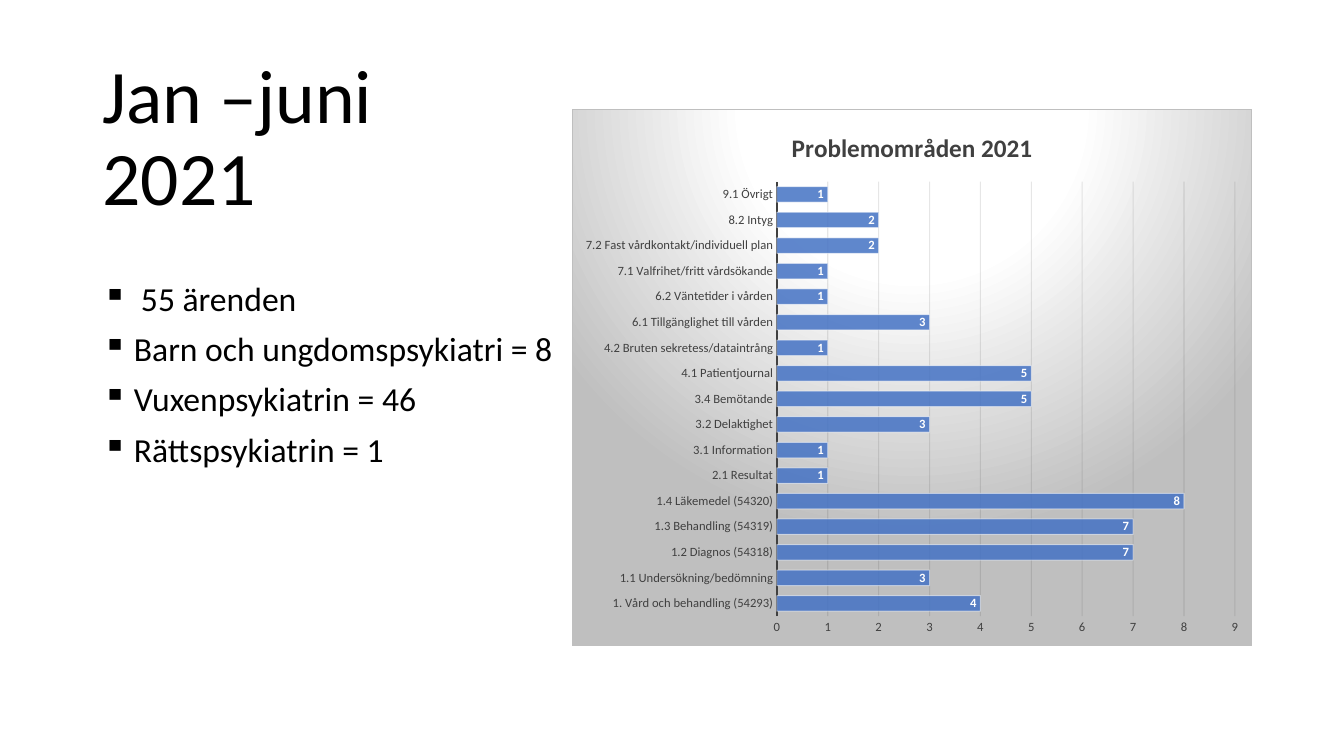
from dataclasses import dataclass

from lxml.etree import SubElement
from pptx import Presentation
from pptx.chart.chart import Chart
from pptx.chart.data import CategoryChartData
from pptx.dml.color import RGBColor
from pptx.enum.chart import XL_CHART_TYPE as ChartType
from pptx.enum.chart import XL_LABEL_POSITION as LabelPosition
from pptx.enum.chart import XL_TICK_MARK as TickMark
from pptx.enum.text import MSO_ANCHOR as Anchor
from pptx.oxml import parse_xml
from pptx.oxml.ns import nsdecls, qn
from pptx.slide import Slide
from pptx.text.text import Font, TextFrame
from pptx.util import Inches, Pt

FONT = "Calibri"
COLORS = {
    "text": "000000",
    "axis": "404040",
    "grid": "0D0D0D",
    "bar": "4472C4",
    "white": "FFFFFF",
    "gray": "BFBFBF",
}


@dataclass
class Bullet:
    text: str
    indent: float = 0.31


@dataclass
class Area:
    left: float
    top: float
    width: float
    height: float

    def lengths(self) -> list[Inches]:
        return [Inches(v) for v in (self.left, self.top, self.width, self.height)]


TITLE_AREA = Area(0.92, 0.5, 4.3, 1.75)
BODY_AREA = Area(0.92, 2.25, 4.75, 4.17)
CHART_AREA = Area(5.67, 1.08, 6.75, 5.33)

BULLETS = [
    Bullet("55 ärenden", 0.38),
    Bullet("Barn och ungdomspsykiatri = 8"),
    Bullet("Vuxenpsykiatrin = 46"),
    Bullet("Rättspsykiatrin = 1"),
]

PROBLEM_COUNTS = {
    "1. Vård och behandling (54293)": 4,
    "1.1 Undersökning/bedömning": 3,
    "1.2 Diagnos (54318)": 7,
    "1.3 Behandling (54319)": 7,
    "1.4 Läkemedel (54320)": 8,
    "2.1 Resultat": 1,
    "3.1 Information": 1,
    "3.2 Delaktighet": 3,
    "3.4 Bemötande": 5,
    "4.1 Patientjournal": 5,
    "4.2 Bruten sekretess/dataintrång": 1,
    "6.1 Tillgänglighet till vården": 3,
    "6.2 Väntetider i vården": 1,
    "7.1 Valfrihet/fritt vårdsökande": 1,
    "7.2 Fast vårdkontakt/individuell plan": 2,
    "8.2 Intyg": 2,
    "9.1 Övrigt": 1,
}


def color(name: str) -> RGBColor:
    return RGBColor.from_string(COLORS[name])


def style_font(font: Font, size: float, color_name: str, bold: bool = False) -> None:
    font.name = FONT
    font.size = Pt(size)
    font.bold = bold
    font.color.rgb = color(color_name)


def add_text_frame(slide: Slide, area: Area) -> TextFrame:
    frame = slide.shapes.add_textbox(*area.lengths()).text_frame
    frame.word_wrap = True
    return frame


def add_title(slide: Slide) -> None:
    frame = add_text_frame(slide, TITLE_AREA)
    frame.vertical_anchor = Anchor.BOTTOM
    para = frame.paragraphs[0]
    para.text = "Jan –juni 2021"
    para.line_spacing = 0.9
    style_font(para.font, 54, "text")


def add_bullets(slide: Slide) -> None:
    frame = add_text_frame(slide, BODY_AREA)
    frame.margin_top = Inches(0.55)
    for index, bullet in enumerate(BULLETS):
        para = frame.add_paragraph() if index else frame.paragraphs[0]
        para.text = bullet.text
        para.line_spacing = 0.9
        para.space_before = Pt(10)
        style_font(para.font, 24, "text")
        properties = para._p.get_or_add_pPr()
        properties.set("marL", str(Inches(bullet.indent)))
        properties.set("indent", str(-Inches(bullet.indent)))
        marker = parse_xml(f'<a:buChar {nsdecls("a")} char="▪"/>')
        properties.find(qn("a:defRPr")).addprevious(marker)


def set_opacity(chart: Chart, parent: str, percent: int) -> None:
    for fill_color in chart.element.xpath(f".//{parent}//a:srgbClr"):
        SubElement(fill_color, qn("a:alpha"), val=str(percent * 1000))


def fill_chart_area(chart: Chart) -> None:
    stops = "".join(
        f'<a:gs pos="{position * 1000}"><a:srgbClr val="{COLORS[name]}"/></a:gs>'
        for position, name in ((0, "white"), (39, "white"), (100, "gray"))
    )
    area_style = parse_xml(
        f'<c:spPr {nsdecls("c", "a")}><a:gradFill><a:gsLst>{stops}</a:gsLst>'
        '<a:path path="circle">'
        '<a:fillToRect l="50000" t="-80000" r="50000" b="180000"/></a:path>'
        f'</a:gradFill><a:ln w="{Pt(0.75)}"><a:solidFill>'
        f'<a:srgbClr val="{COLORS["gray"]}"/></a:solidFill></a:ln></c:spPr>'
    )
    chart.element.find(qn("c:chart")).addnext(area_style)


def style_axes(chart: Chart) -> None:
    for axis in (chart.category_axis, chart.value_axis):
        axis.major_tick_mark = TickMark.NONE
        axis.minor_tick_mark = TickMark.NONE
        style_font(axis.tick_labels.font, 9, "axis")
    category_line = chart.category_axis.format.line
    category_line.color.rgb = color("axis")
    category_line.width = Pt(1.5)

    values = chart.value_axis
    values.minimum_scale, values.maximum_scale, values.major_unit = 0, 9, 1
    values.format.line.fill.background()
    values.has_major_gridlines = True
    grid_line = values.major_gridlines.format.line
    grid_line.color.rgb = color("grid")
    grid_line.width = Pt(0.75)
    set_opacity(chart, "c:majorGridlines", 10)


def style_bars(chart: Chart) -> None:
    plot = chart.plots[0]
    plot.gap_width = 65
    plot.vary_by_categories = False
    bars = plot.series[0]
    bars.format.fill.solid()
    bars.format.fill.fore_color.rgb = color("bar")
    bars.format.line.color.rgb = color("white")
    bars.format.line.width = Pt(0.75)
    set_opacity(chart, "c:ser/c:spPr/a:solidFill", 85)
    set_opacity(chart, "c:ser/c:spPr/a:ln", 50)
    labels = bars.data_labels
    labels.show_value = True
    labels.position = LabelPosition.INSIDE_END
    style_font(labels.font, 9, "white", bold=True)


def add_problem_chart(slide: Slide) -> None:
    data = CategoryChartData()
    data.categories = list(PROBLEM_COUNTS)
    data.add_series("Series 1", list(PROBLEM_COUNTS.values()))
    chart = slide.shapes.add_chart(
        ChartType.BAR_CLUSTERED, *CHART_AREA.lengths(), data
    ).chart
    style_font(chart.font, 10, "text")
    chart.has_legend = False
    chart.has_title = True
    heading = chart.chart_title.text_frame.paragraphs[0]
    heading.text = "Problemområden 2021"
    style_font(heading.font, 18, "axis", bold=True)
    style_axes(chart)
    style_bars(chart)
    fill_chart_area(chart)


def main() -> None:
    deck = Presentation()
    deck.slide_width, deck.slide_height = Inches(13.33), Inches(7.5)
    page = deck.slides.add_slide(deck.slide_layouts[6])
    add_title(page)
    add_bullets(page)
    add_problem_chart(page)
    deck.save("out.pptx")


if __name__ == "__main__":
    main()
